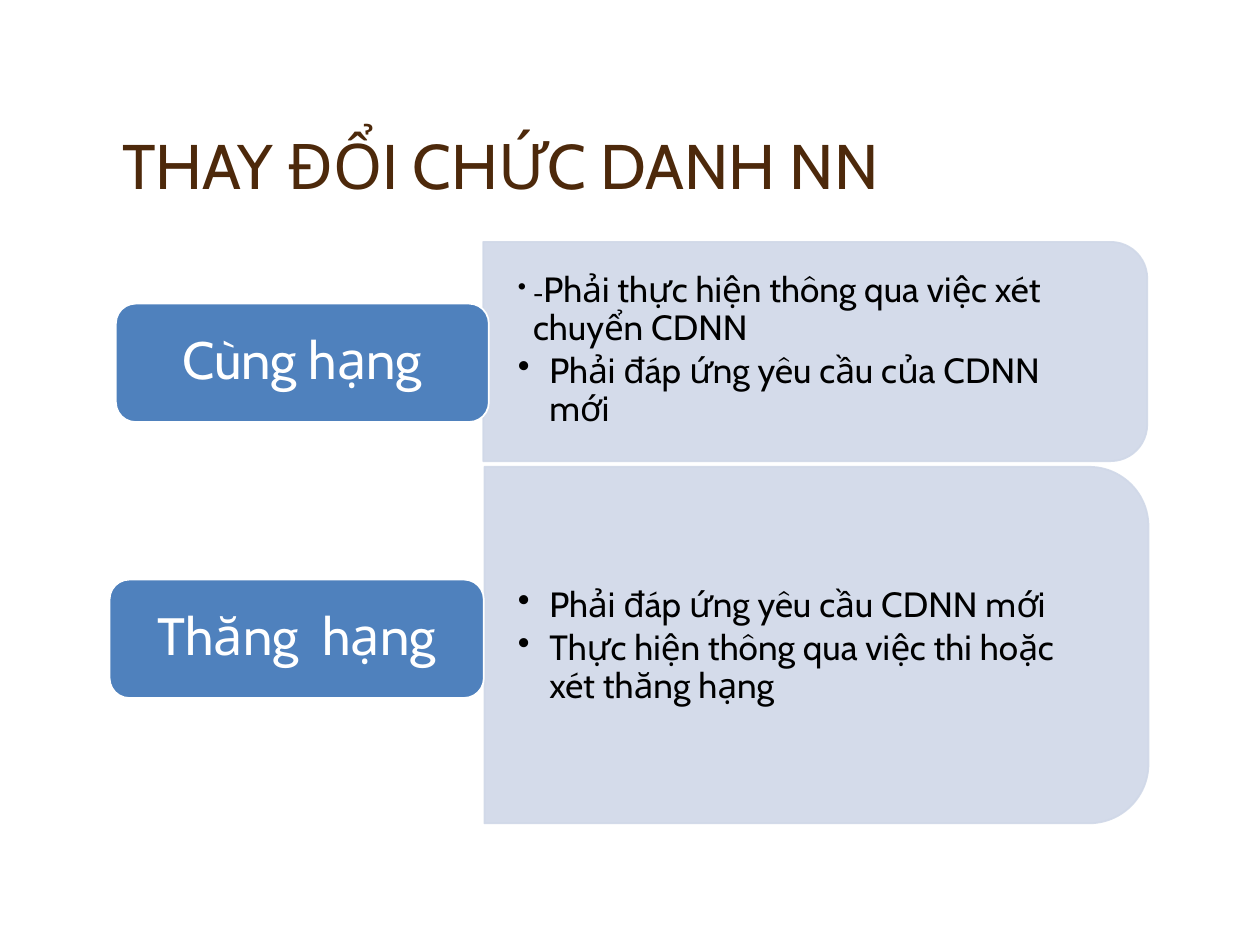
from lxml.etree import SubElement
from pptx import Presentation
from pptx.dml.color import RGBColor
from pptx.enum.shapes import MSO_SHAPE
from pptx.enum.text import MSO_ANCHOR, PP_ALIGN
from pptx.oxml.ns import qn
from pptx.util import Inches, Pt

FONT = "Cabin"
PANEL_COLOR = "D0D8E8"
PANEL_LENGTH = 5.27
LABEL_HEIGHT = 0.94
LABEL_INSET = 0.05


def color(value):
    return RGBColor.from_string(value)


def style_span(span, size, value):
    span.font.name = FONT
    span.font.size = Pt(size)
    span.font.color.rgb = color(value)


def add_text_box(page, left, top, width, height, anchor, side=0.1, end=0.05):
    box = page.shapes.add_textbox(Inches(left), Inches(top), Inches(width), Inches(height))
    frame = box.text_frame
    frame.word_wrap = True
    frame.vertical_anchor = anchor
    frame.margin_left = frame.margin_right = Inches(side)
    frame.margin_top = frame.margin_bottom = Inches(end)
    return frame


def add_line(frame, text, size, value, align=PP_ALIGN.LEFT):
    paragraph = frame.paragraphs[0]
    paragraph.text = text
    paragraph.alignment = align
    paragraph.line_spacing = 0.9
    style_span(paragraph.runs[0], size, value)


def add_filled_shape(page, kind, left, top, width, height, fill, line):
    shape = page.shapes.add_shape(kind, Inches(left), Inches(top), Inches(width), Inches(height))
    shape.shadow.inherit = False
    shape.fill.solid()
    shape.fill.fore_color.rgb = color(fill)
    shape.line.color.rgb = color(line)
    shape.line.width = Pt(1)
    return shape


def add_panel(page, center_x, center_y, height):
    panel = add_filled_shape(
        page, MSO_SHAPE.ROUND_2_SAME_RECTANGLE,
        center_x - height / 2, center_y - PANEL_LENGTH / 2, height, PANEL_LENGTH,
        PANEL_COLOR, PANEL_COLOR,
    )
    panel.rotation = 90
    for element in panel.element.spPr.iter(qn("a:srgbClr")):
        SubElement(element, qn("a:alpha"), val="90000")


def add_bullets(page, left, top, width, height, items):
    frame = add_text_box(page, left, top, width, height, MSO_ANCHOR.MIDDLE, 0.27, 0.14)
    for index, (indent, spans) in enumerate(items):
        paragraph = frame.add_paragraph() if index else frame.paragraphs[0]
        properties = paragraph._p.get_or_add_pPr()
        properties.set("marL", str(Inches(indent)))
        properties.set("indent", str(-Inches(indent)))
        SubElement(properties, qn("a:buChar"), char="•")
        paragraph.line_spacing = 0.9
        paragraph.space_after = Pt(3)
        for text, size in spans:
            span = paragraph.add_run()
            span.text = text
            style_span(span, size, "000000")


def add_label(page, left, top, width, text):
    add_filled_shape(
        page, MSO_SHAPE.ROUNDED_RECTANGLE, left, top, width, LABEL_HEIGHT, "4F81BD", "FFFFFF"
    )
    frame = add_text_box(
        page, left + LABEL_INSET, top + LABEL_INSET, width - 2 * LABEL_INSET,
        LABEL_HEIGHT - 2 * LABEL_INSET, MSO_ANCHOR.MIDDLE, 0.12, 0.06,
    )
    add_line(frame, text, 30, "FFFFFF", PP_ALIGN.CENTER)


def main():
    deck = Presentation()
    deck.slide_width = Inches(10)
    deck.slide_height = Inches(7.5)
    page = deck.slides.add_slide(deck.slide_layouts[6])

    title = add_text_box(page, 0.87, 0.33, 8.25, 1.33, MSO_ANCHOR.BOTTOM)
    add_line(title, "THAY ĐỔI CHỨC DANH NN", 36, "4D290B")

    add_panel(page, 6.47, 2.79, 1.74)
    add_bullets(page, 3.84, 2, 5.18, 1.57, [
        (0.12, [("-", 14), ("Phải thực hiện thông qua việc xét chuyển CDNN", 20)]),
        (0.25, [("Phải đáp ứng yêu cầu của CDNN mới", 20)]),
    ])
    add_label(page, 0.92, 2.41, 2.96, "Cùng hạng")

    add_panel(page, 6.48, 5.12, 2.83)
    add_bullets(page, 3.84, 3.85, 5.14, 2.56, [
        (0.25, [("Phải đáp ứng yêu cầu CDNN mới", 20)]),
        (0.25, [("Thực hiện thông qua việc thi hoặc xét thăng hạng", 20)]),
    ])
    add_label(page, 0.87, 4.6, 2.97, "Thăng  hạng")

    deck.save("out.pptx")


if __name__ == "__main__":
    main()
